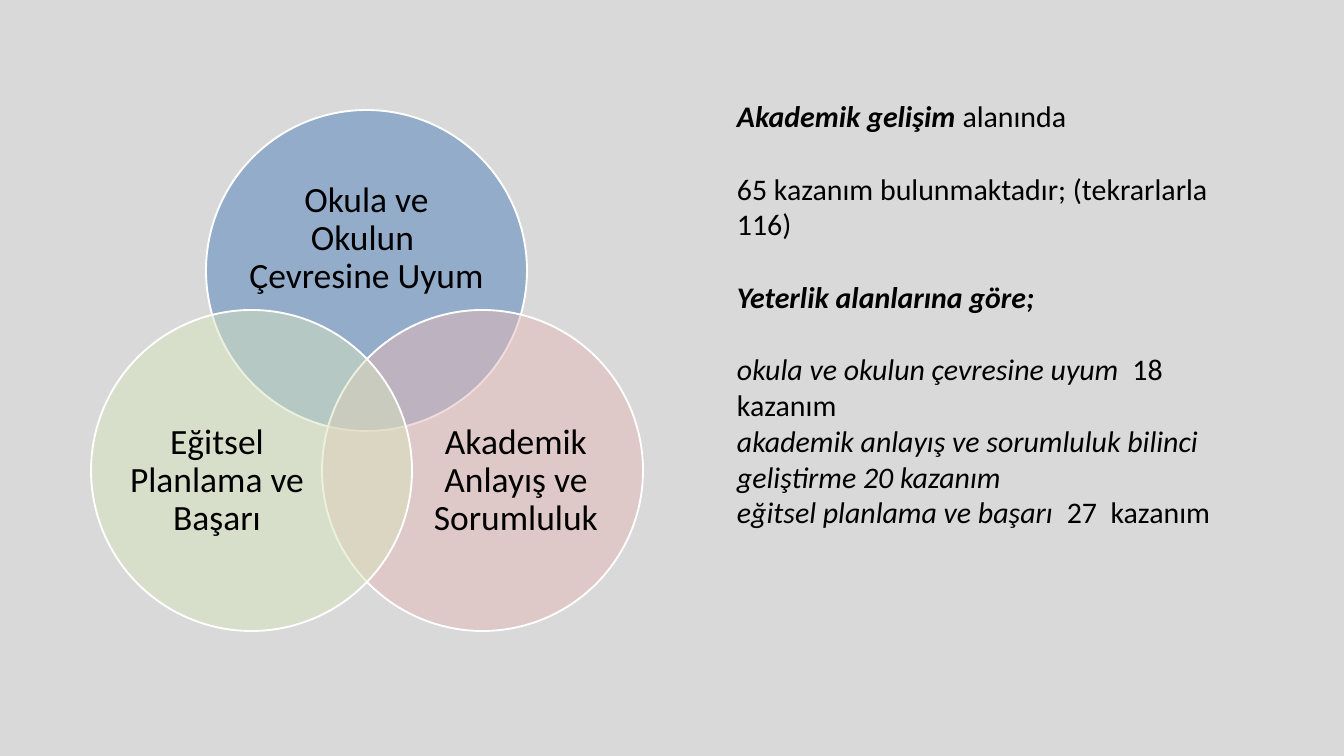
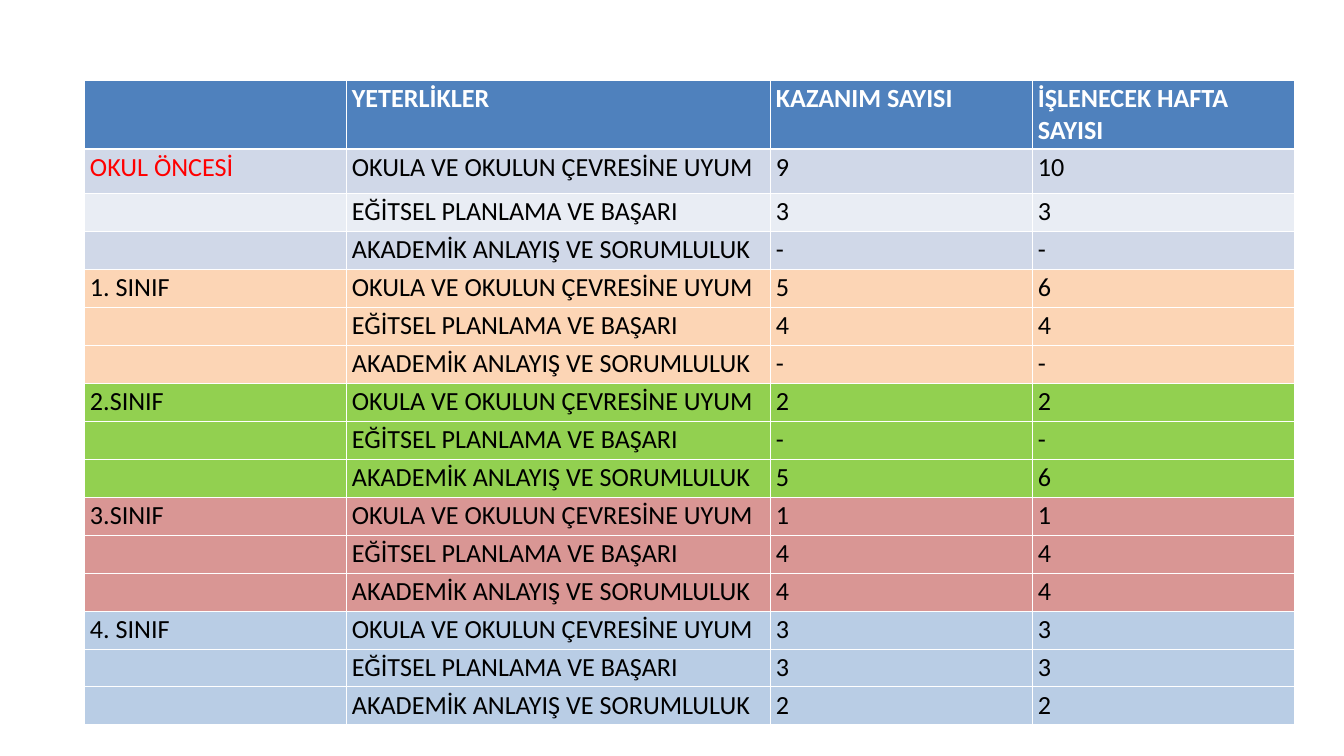
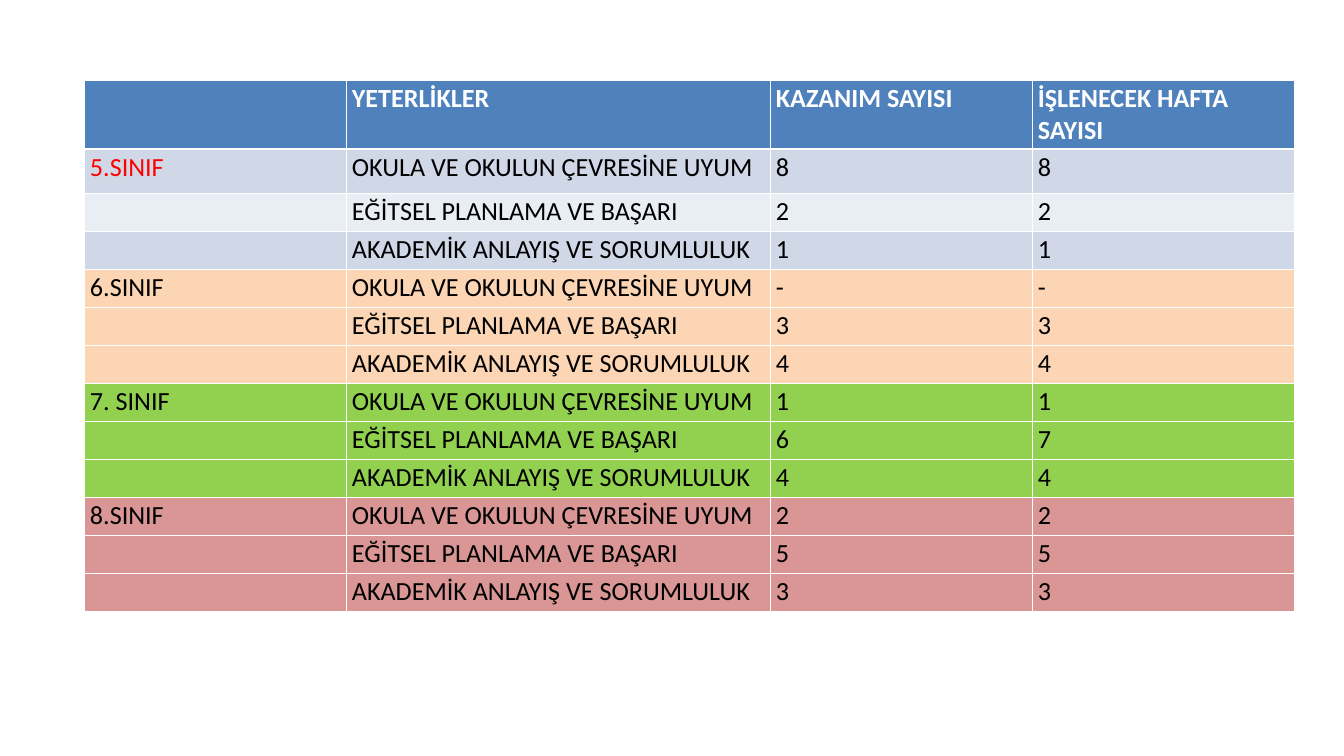
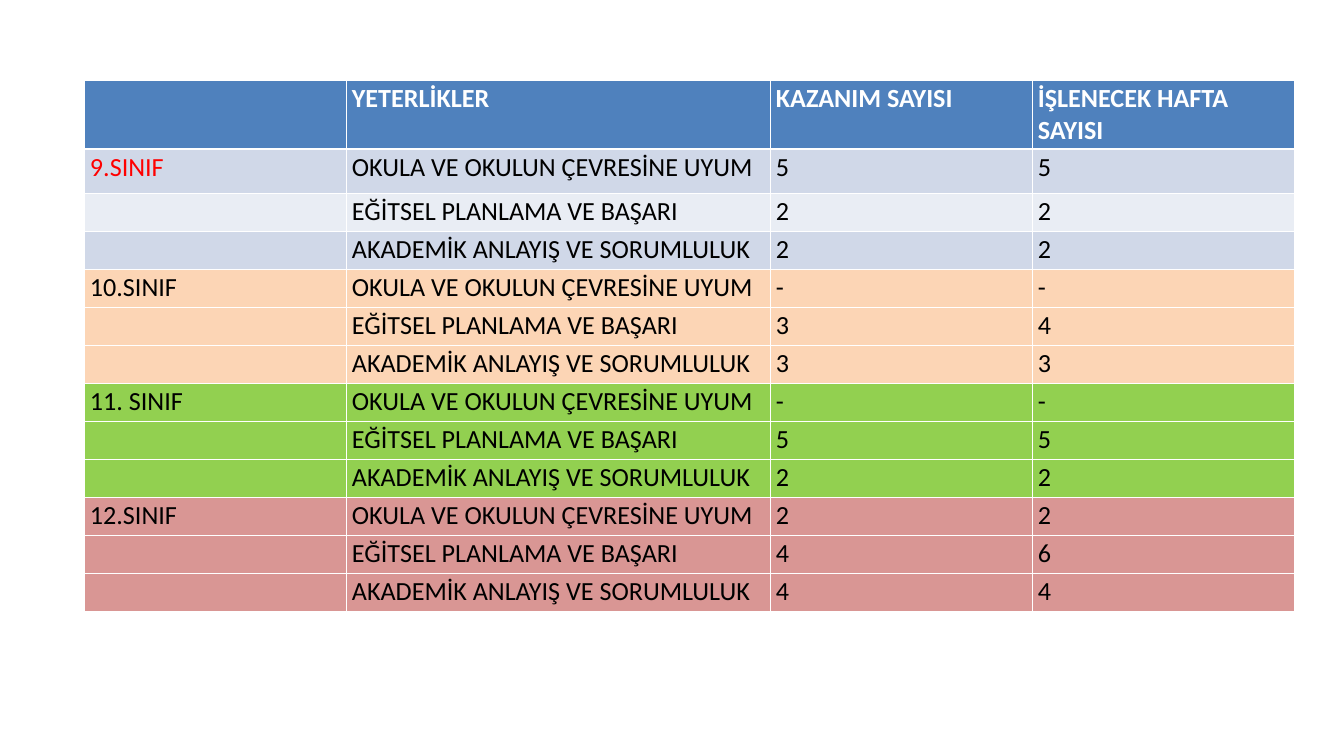
from lxml import etree
from pptx import Presentation
from pptx.dml.color import RGBColor
from pptx.enum.shapes import MSO_SHAPE
from pptx.enum.text import MSO_ANCHOR, MSO_AUTO_SIZE, PP_ALIGN
from pptx.oxml.ns import qn
from pptx.util import Emu, Pt

OVAL = MSO_SHAPE.OVAL
TOP, MIDDLE = MSO_ANCHOR.TOP, MSO_ANCHOR.MIDDLE
LEFT, CENTER = PP_ALIGN.LEFT, PP_ALIGN.CENTER
GROW = MSO_AUTO_SIZE.SHAPE_TO_FIT_TEXT

EMU_PER_PX = 20 * 914400 / 1344
FONT = "Calibri"
COLORS = {
    "black": "000000", "white": "FFFFFF", "grey": "D9D9D9", "red": "FF0000",
    "blue": "4F81BD", "pink": "E6B9B8", "olive": "D7E4BD",
    "band": "D0D8E8", "pale band": "E9EDF4", "peach": "FCD5B5",
    "green": "92D050", "rose": "D99694", "sky": "B9CDE5",
}

CIRCLE_SIZE = 321
CIRCLES = [
    ((206, 110), "blue", (249, 167, 235, 144), "Okula ve Okulun  Çevresine Uyum"),
    ((322, 310), "pink", (420, 393, 192, 176), "Akademik Anlayış ve Sorumluluk"),
    ((91, 310), "olive", (121, 393, 192, 176), "Eğitsel Planlama ve Başarı"),
]
BLANK_LINE = 39
SUMMARY = [
    (0, [("Akademik gelişim ", True, True), ("alanında", False, False)]),
    (BLANK_LINE, [("65 kazanım bulunmaktadır; (tekrarlarla  116)", False, False)]),
    (BLANK_LINE, [("Yeterlik alanlarına göre;", True, True)]),
    (BLANK_LINE, [("okula ve okulun çevresine uyum  ", False, True),
                  ("18 kazanım", False, False)]),
    (0, [("akademik anlayış ve sorumluluk bilinci geliştirme 20 kazanım", False, True)]),
    (0, [("eğitsel planlama ve başarı  ", False, True), ("27  kazanım", False, False)]),
]

HEADINGS = ["", "YETERLİKLER", "KAZANIM SAYISI", "İŞLENECEK HAFTA SAYISI"]
SKILLS = ["OKULA VE OKULUN ÇEVRESİNE UYUM", "EĞİTSEL PLANLAMA VE BAŞARI",
          "AKADEMİK ANLAYIŞ VE SORUMLULUK"]
COLUMN_WIDTHS = [262, 424, 262, 262]
HEADER_HEIGHT, FIRST_HEIGHT, ROW_HEIGHT = 69, 44, 38
GRADE_FILLS = [("band", "pale band", "band"), ("peach",) * 3, ("green",) * 3,
               ("rose",) * 3, ("sky",) * 3]
GRADE_TABLES = [
    [
        ("OKUL ÖNCESİ", [("9", "10"), ("3", "3"), ("-", "-")]),
        ("1. SINIF", [("5", "6"), ("4", "4"), ("-", "-")]),
        ("2.SINIF", [("2", "2"), ("-", "-"), ("5", "6")]),
        ("3.SINIF", [("1", "1"), ("4", "4"), ("4", "4")]),
        ("4. SINIF", [("3", "3"), ("3", "3"), ("2", "2")]),
    ],
    [
        ("5.SINIF", [("8", "8"), ("2", "2"), ("1", "1")]),
        ("6.SINIF", [("-", "-"), ("3", "3"), ("4", "4")]),
        ("7. SINIF", [("1", "1"), ("6", "7"), ("4", "4")]),
        ("8.SINIF", [("2", "2"), ("5", "5"), ("3", "3")]),
    ],
    [
        ("9.SINIF", [("5", "5"), ("2", "2"), ("2", "2")]),
        ("10.SINIF", [("-", "-"), ("3", "4"), ("3", "3")]),
        ("11. SINIF", [("-", "-"), ("5", "5"), ("2", "2")]),
        ("12.SINIF", [("2", "2"), ("4", "6"), ("4", "4")]),
    ],
]


def px(length):
    """Turn a length in px into EMU."""
    return Emu(round(length * EMU_PER_PX))


def rgb(name):
    """Look up a named colour."""
    return RGBColor.from_string(COLORS[name])


def add_text(para, text, size=28, color="black", bold=False, italic=False):
    """Append a formatted span to a paragraph."""
    span = para.add_run()
    span.text = text
    span.font.name = FONT
    span.font.size = Pt(size)
    span.font.bold = bold
    span.font.italic = italic
    span.font.color.rgb = rgb(color)


def set_borders(cell, widths, color="white"):
    """Draw the left, right, top and bottom borders of a cell."""
    properties = cell._tc.get_or_add_tcPr()
    for index, (side, width) in enumerate(zip("LRTB", widths)):
        line = etree.Element(qn(f"a:ln{side}"), w=str(Pt(width)))
        fill = etree.SubElement(line, qn("a:solidFill"))
        etree.SubElement(fill, qn("a:srgbClr"), val=COLORS[color])
        properties.insert(index, line)


class Deck:
    """Holds the presentation, its style and the current page."""

    def __init__(self):
        """Start a wide presentation."""
        self.deck = Presentation()
        self.deck.slide_width, self.deck.slide_height = px(1344), px(756)
        self.page = None

    def add_page(self, background="white"):
        """Start a blank page with a plain background."""
        self.page = self.deck.slides.add_slide(self.deck.slide_layouts[6])
        self.page.background.fill.solid()
        self.page.background.fill.fore_color.rgb = rgb(background)

    def add_circle(self, parent, left, top, size, color):
        """Add a half transparent circle with a white outline."""
        circle = parent.shapes.add_shape(OVAL, px(left), px(top), px(size), px(size))
        circle.shadow.inherit = False
        circle.fill.solid()
        circle.fill.fore_color.rgb = rgb(color)
        shade = circle._element.spPr.find(qn("a:solidFill"))[0]
        etree.SubElement(shade, qn("a:alpha"), val="50000")
        circle.line.color.rgb = rgb("white")
        circle.line.width = Pt(2)

    def add_box(self, parent, area, paragraphs, size, align=LEFT, anchor=TOP,
                inset=(0, 0), line_spacing=1.0, space_after=0):
        """Add a text box of (space before, spans) paragraphs."""
        frame = parent.shapes.add_textbox(*map(px, area)).text_frame
        frame.word_wrap = True
        frame.vertical_anchor = anchor
        frame.margin_left = frame.margin_right = px(inset[0])
        frame.margin_top = frame.margin_bottom = px(inset[1])
        for index, (space_before, spans) in enumerate(paragraphs):
            para = frame.add_paragraph() if index else frame.paragraphs[0]
            para.alignment = align
            para.line_spacing = line_spacing
            para.space_before, para.space_after = Pt(space_before), Pt(space_after)
            for text, bold, italic in spans:
                add_text(para, text, size=size, bold=bold, italic=italic)
        return frame

    def add_cell(self, cell, text, fill, color="black", bold=False, borders=(1, 1, 1, 1)):
        """Fill and label one table cell."""
        cell.margin_left = cell.margin_right = px(6)
        cell.margin_top = cell.margin_bottom = px(3)
        cell.fill.solid()
        cell.fill.fore_color.rgb = rgb(fill)
        set_borders(cell, borders)
        if text:
            add_text(cell.text_frame.paragraphs[0], text, color=color, bold=bold)

    def add_grade_table(self, left, top, grades):
        """Add a table with three skill rows for each grade."""
        rows = [
            ((label if not index else "", skill, *counts), fill)
            for (label, values), fills in zip(grades, GRADE_FILLS)
            for index, (skill, counts, fill) in enumerate(zip(SKILLS, values, fills))
        ]
        heights = [HEADER_HEIGHT, FIRST_HEIGHT] + [ROW_HEIGHT] * (len(rows) - 1)
        table = self.page.shapes.add_table(
            len(heights), len(HEADINGS), px(left), px(top),
            px(sum(COLUMN_WIDTHS)), px(sum(heights))).table
        table.horz_banding = False
        for column, width in zip(table.columns, COLUMN_WIDTHS):
            column.width = px(width)
        for row, height in zip(table.rows, heights):
            row.height = px(height)
        for column, heading in enumerate(HEADINGS):
            self.add_cell(table.cell(0, column), heading, "blue", color="white",
                          bold=True, borders=(1, 1, 1, 3))
        for row, (texts, fill) in enumerate(rows, 1):
            for column, text in enumerate(texts):
                first = row == 1
                self.add_cell(table.cell(row, column), text, fill,
                              color="red" if first and column == 0 else "black",
                              borders=(1, 1, 3 if first else 1, 1))


def main():
    """Build the four pages and save them."""
    deck = Deck()
    deck.add_page("grey")
    diagram = deck.page.shapes.add_group_shape()
    for corner, color, label_area, label in CIRCLES:
        deck.add_circle(diagram, *corner, CIRCLE_SIZE, color)
        deck.add_box(diagram, label_area, [(0, [(label, False, False)])], 38,
                     align=CENTER, anchor=MIDDLE, line_spacing=0.9, space_after=13)
    summary = deck.add_box(deck.page, (726, 93, 526, 519), SUMMARY, 32, inset=(11, 5))
    summary.auto_size = GROW
    for grades in GRADE_TABLES:
        deck.add_page()
        deck.add_grade_table(84, 80, grades)
    deck.deck.save("out.pptx")


if __name__ == "__main__":
    main()
